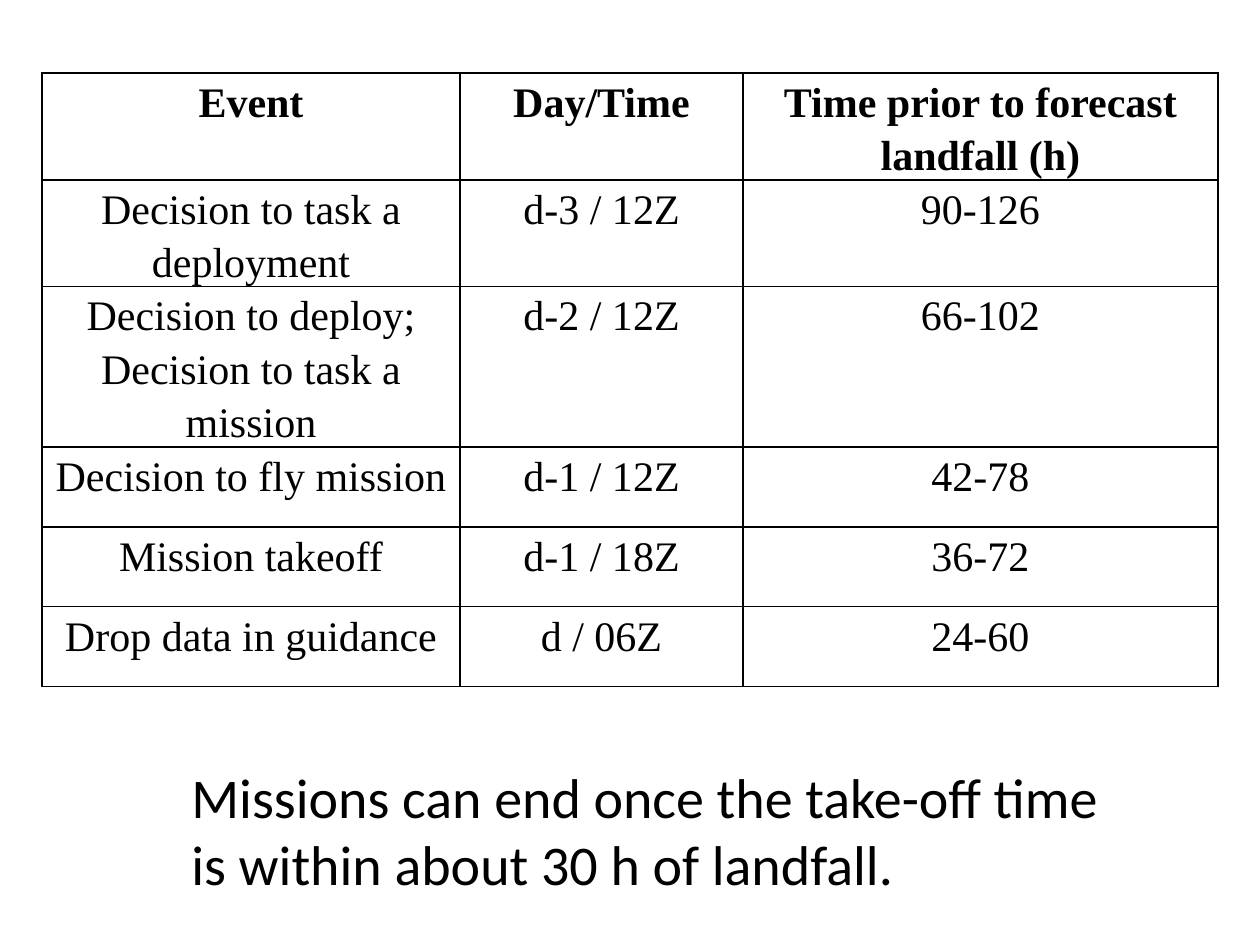
from dataclasses import dataclass

from lxml.etree import SubElement
from pptx import Presentation
from pptx.dml.color import RGBColor
from pptx.enum.text import MSO_AUTO_SIZE, PP_ALIGN
from pptx.oxml.ns import qn
from pptx.util import Pt

HEADINGS = ("Event", "Day/Time", "Time prior to forecast landfall (h)")
TIMELINE = [
    ("Decision to task a deployment", "d-3 / 12Z", "90-126"),
    ("Decision to deploy;\nDecision to task a mission", "d-2 / 12Z", "66-102"),
    ("Decision to fly mission", "d-1 / 12Z", "42-78"),
    ("Mission takeoff", "d-1 / 18Z", "36-72"),
    ("Drop data in guidance", "d / 06Z", "24-60"),
]
CONCLUSION = "Missions can end once the take-off time is within about 30 h of landfall."

SLIDE_SIZE = (1260, 945)
TABLE_LEFT, TABLE_TOP = 42, 73
COLUMN_WIDTHS = (418, 283, 475)
LINE_HEIGHT = 80  # row height for each paragraph in the event column
CELL_INSET = 9
CONCLUSION_BOX = (179, 756, 935, 149)


@dataclass(frozen=True)
class Theme:
    ink: str = "000000"
    table_font: str = "Times New Roman"
    table_size: int = 24
    body_font: str = "Calibri"
    body_size: int = 32
    border: int = 1


THEME = Theme()


def px(length):
    return round(length * 914400 / 126)


def write(frame, text, *, font, size, bold=False, align=PP_ALIGN.LEFT,
          spacing=None, before=None, after=None):
    """Fill a text frame; before and after surround the whole text, in points."""
    lines = text.split("\n")
    for index, line in enumerate(lines):
        paragraph = frame.add_paragraph() if index else frame.paragraphs[0]
        paragraph.alignment = align
        paragraph.line_spacing = spacing
        if before is not None and index == 0:
            paragraph.space_before = Pt(before)
        if after is not None and index == len(lines) - 1:
            paragraph.space_after = Pt(after)
        run = paragraph.add_run()
        run.text = line
        run.font.name = font
        run.font.size = Pt(size)
        run.font.bold = bold
        run.font.color.rgb = RGBColor.from_string(THEME.ink)


def add_borders(cell):
    properties = cell._tc.get_or_add_tcPr()
    for position, side in enumerate(("lnL", "lnR", "lnT", "lnB")):
        line = properties.makeelement(qn(f"a:{side}"), {"w": str(Pt(THEME.border))})
        properties.insert(position, line)
        fill = SubElement(line, qn("a:solidFill"))
        SubElement(fill, qn("a:srgbClr"), val=THEME.ink)


def add_timeline(slide):
    rows = [HEADINGS, *TIMELINE]
    heights = [LINE_HEIGHT * len(row[0].split("\n")) for row in rows]
    table = slide.shapes.add_table(
        len(rows), len(HEADINGS), px(TABLE_LEFT), px(TABLE_TOP),
        px(sum(COLUMN_WIDTHS)), px(sum(heights))).table
    table.horz_banding = False
    table.first_row = False
    for column, width in zip(table.columns, COLUMN_WIDTHS):
        column.width = px(width)
    for row_index, (row, height) in enumerate(zip(rows, heights)):
        table.rows[row_index].height = px(height)
        for column_index, text in enumerate(row):
            cell = table.cell(row_index, column_index)
            cell.margin_left = cell.margin_right = px(CELL_INSET)
            cell.margin_top = cell.margin_bottom = 0
            cell.fill.background()
            add_borders(cell)
            write(cell.text_frame, text, font=THEME.table_font,
                  size=THEME.table_size, bold=row_index == 0,
                  align=PP_ALIGN.CENTER, spacing=1.15, before=5, after=2.7)


def add_conclusion(slide):
    frame = slide.shapes.add_textbox(*map(px, CONCLUSION_BOX)).text_frame
    frame.word_wrap = True
    frame.auto_size = MSO_AUTO_SIZE.SHAPE_TO_FIT_TEXT
    write(frame, CONCLUSION, font=THEME.body_font, size=THEME.body_size)


def main():
    deck = Presentation()
    deck.slide_width, deck.slide_height = map(px, SLIDE_SIZE)
    slide = deck.slides.add_slide(deck.slide_layouts[6])
    add_timeline(slide)
    add_conclusion(slide)
    deck.save("out.pptx")


if __name__ == "__main__":
    main()
